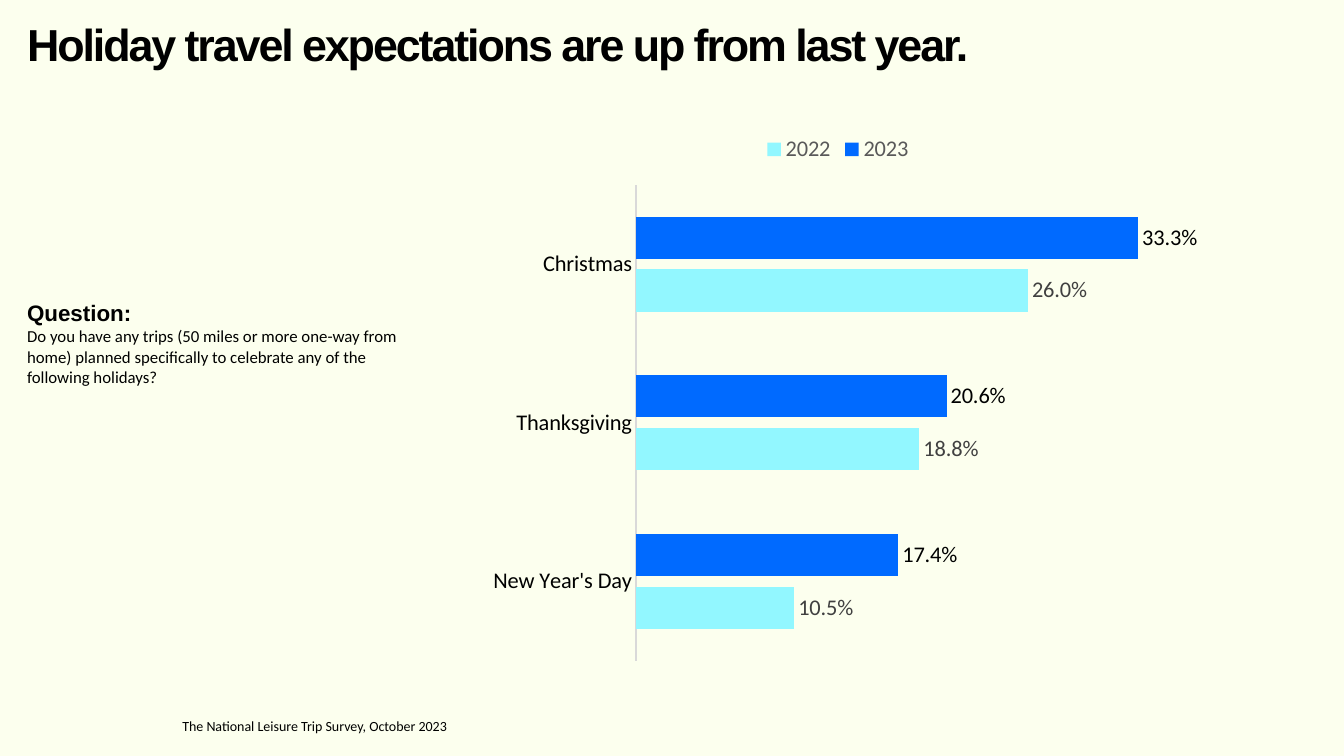
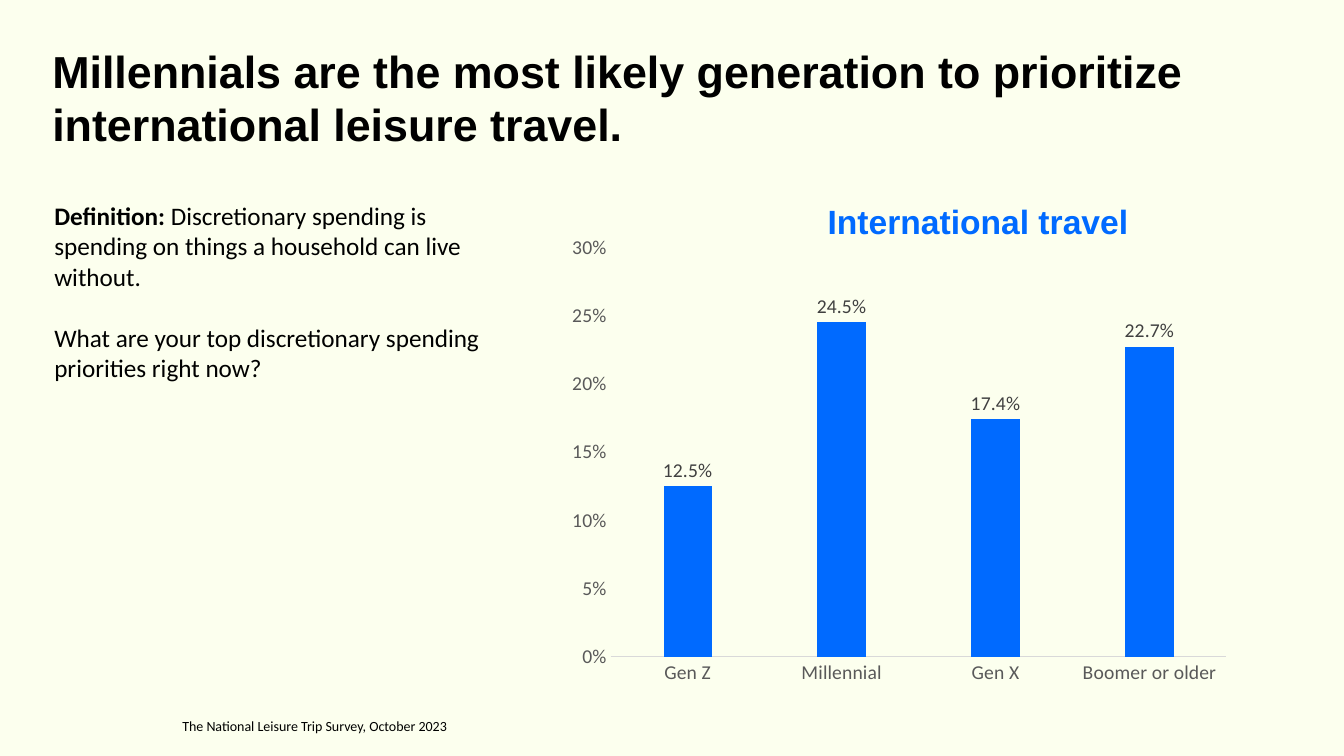
import pptx
import pptx.chart.data
import pptx.dml.color
import pptx.enum.chart
import pptx.oxml
import pptx.oxml.ns
import pptx.util

Inches = pptx.util.Inches
Pt = pptx.util.Pt
Chart = pptx.enum.chart

COLORS = {
    "paper": "FCFFEE",
    "ink": "000000",
    "blue": "006AFF",
    "aqua": "92F7FF",
    "label": "404040",
    "axis": "595959",
    "rule": "D9D9D9",
}
HEADING = "Arial"
BODY = "Calibri"
SOURCE = "The National Leisure Trip Survey, October 2023"


def color(name):
    return pptx.dml.color.RGBColor.from_string(COLORS[name])


def style(font, size, ink="ink", face=BODY, bold=False):
    font.name = face
    font.size = Pt(size)
    font.bold = bold
    font.color.rgb = color(ink)


class Report:
    def __init__(self):
        self.deck = pptx.Presentation()
        self.deck.slide_width = Inches(13.33)
        self.deck.slide_height = Inches(7.5)
        paper = self.deck.slide_master.background.fill
        paper.solid()
        paper.fore_color.rgb = color("paper")

    def page(self):
        self.slide = self.deck.slides.add_slide(self.deck.slide_layouts[6])
        self.text((1.71, 7.07, 3.53, 0.27), [[(SOURCE, {"size": 10})]])

    def text(self, place, paragraphs, gap=0, spacing=None):
        """Add a box; each paragraph is a list of (text, style) spans."""
        box = self.slide.shapes.add_textbox(*map(Inches, place))
        frame = box.text_frame
        frame.word_wrap = True
        for index, spans in enumerate(paragraphs):
            para = frame.add_paragraph() if index else frame.paragraphs[0]
            if index and gap:
                para.space_before = Pt(gap)
            for words, look in spans:
                span = para.add_run()
                span.text = words
                style(span.font, **look)
                if spacing:
                    span._r.get_or_add_rPr().set("spc", str(int(spacing * 100)))

    def heading(self, place, words, size=32, ink="ink", spacing=None):
        look = {"size": size, "ink": ink, "face": HEADING, "bold": True}
        self.text(place, [[(words, look)]], spacing=spacing)

    def chart(self, kind, place, categories, series, size, gap, overlap, top):
        """Add a bar chart; each series is (name, values, fill, label ink)."""
        data = pptx.chart.data.CategoryChartData(number_format="0.0%")
        data.categories = categories
        for name, values, _, _ in series:
            data.add_series(name, values)
        chart = self.slide.shapes.add_chart(kind, *map(Inches, place), data).chart
        style(chart.font, size)
        chart.has_title = False
        chart.has_legend = False

        plot = chart.plots[0]
        plot.gap_width = gap
        plot.overlap = overlap
        plot.vary_by_categories = False
        for bars, (_, _, fill, ink) in zip(plot.series, series):
            bars.format.fill.solid()
            bars.format.fill.fore_color.rgb = color(fill)
            bars.invert_if_negative = False
            labels = bars.data_labels
            labels.show_value = True
            labels.number_format = "0.0%"
            labels.number_format_is_linked = False
            labels.position = Chart.XL_LABEL_POSITION.OUTSIDE_END
            style(labels.font, size, ink)

        for axis in (chart.category_axis, chart.value_axis):
            axis.has_major_gridlines = False
            axis.major_tick_mark = Chart.XL_TICK_MARK.NONE
            axis.minor_tick_mark = Chart.XL_TICK_MARK.NONE
            style(axis.tick_labels.font, size, "axis")
        rule = chart.category_axis.format.line
        rule.width = Pt(0.75)
        rule.color.rgb = color("rule")
        values = chart.value_axis
        values.minimum_scale = 0
        values.maximum_scale = top
        values.major_unit = 0.05
        values.tick_labels.number_format = "0%"
        values.tick_labels.number_format_is_linked = False
        values.format.line.fill.background()
        return chart

    def legend(self, chart, size):
        chart.has_legend = True
        chart.legend.position = Chart.XL_LEGEND_POSITION.TOP
        chart.legend.include_in_layout = False
        style(chart.legend.font, size, "axis")

    def plot_area(self, chart, x, y, w, h):
        """Fix the inner plot area, in fractions of the chart."""
        area = chart._chartSpace.chart.plotArea
        for old in area.findall(pptx.oxml.ns.qn("c:layout")):
            area.remove(old)
        sizes = "".join(
            f'<c:{tag} val="{value}"/>' for tag, value in zip("xywh", (x, y, w, h))
        )
        area.insert(0, pptx.oxml.parse_xml(
            f'<c:layout {pptx.oxml.ns.nsdecls("c")}><c:manualLayout>'
            '<c:layoutTarget val="inner"/><c:xMode val="edge"/><c:yMode val="edge"/>'
            f"{sizes}</c:manualLayout></c:layout>"
        ))


def holiday_page(report):
    report.page()
    chart = report.chart(
        Chart.XL_CHART_TYPE.BAR_CLUSTERED,
        (4.46, 1.23, 7.7, 5.49),
        ["Christmas", "Thanksgiving", "New Year's Day"],
        [
            ("2023", (0.333, 0.206, 0.174), "blue", "ink"),
            ("2022", (0.26, 0.188, 0.105), "aqua", "label"),
        ],
        size=16, gap=150, overlap=-25, top=0.35,
    )
    chart.category_axis.reverse_order = True
    chart.category_axis.tick_labels.font.color.rgb = color("ink")
    chart.value_axis.visible = False
    report.legend(chart, 16)
    report.plot_area(chart, 0.24, 0.11, 0.68, 0.86)
    report.heading(
        (0.17, 0.12, 12.46, 0.64),
        "Holiday travel expectations are up from last year.",
        spacing=-1.5,
    )
    report.text((0.17, 2.92, 3.91, 1.01), [
        [("Question:", {"size": 16, "face": HEADING, "bold": True})],
        [("Do you have any trips (50 miles or more one-way from home) planned "
          "specifically to celebrate any of the following holidays?", {"size": 12})],
    ])


def generation_page(report):
    report.page()
    report.text((0.44, 1.94, 4.46, 2.17), [
        [("Definition: ", {"size": 18, "bold": True}),
         ("Discretionary spending is spending on things a household can live "
          "without.", {"size": 18})],
        [("What are your top discretionary spending priorities right now?",
          {"size": 18})],
    ], gap=22)
    report.heading(
        (0.42, 0.38, 12.28, 1.18),
        "Millennials are the most likely generation to prioritize "
        "international leisure travel.",
    )
    report.chart(
        Chart.XL_CHART_TYPE.COLUMN_CLUSTERED,
        (5.54, 2.24, 6.76, 4.65),
        ["Gen Z", "Millennial", "Gen X", "Boomer or older"],
        [("Series 1", (0.125, 0.245, 0.174, 0.227), "blue", "label")],
        size=14, gap=219, overlap=-27, top=0.3,
    )
    report.heading((8.11, 1.94, 4.39, 0.5), "International travel", 24, "blue")


def main():
    report = Report()
    holiday_page(report)
    generation_page(report)
    report.deck.save("out.pptx")


if __name__ == "__main__":
    main()
